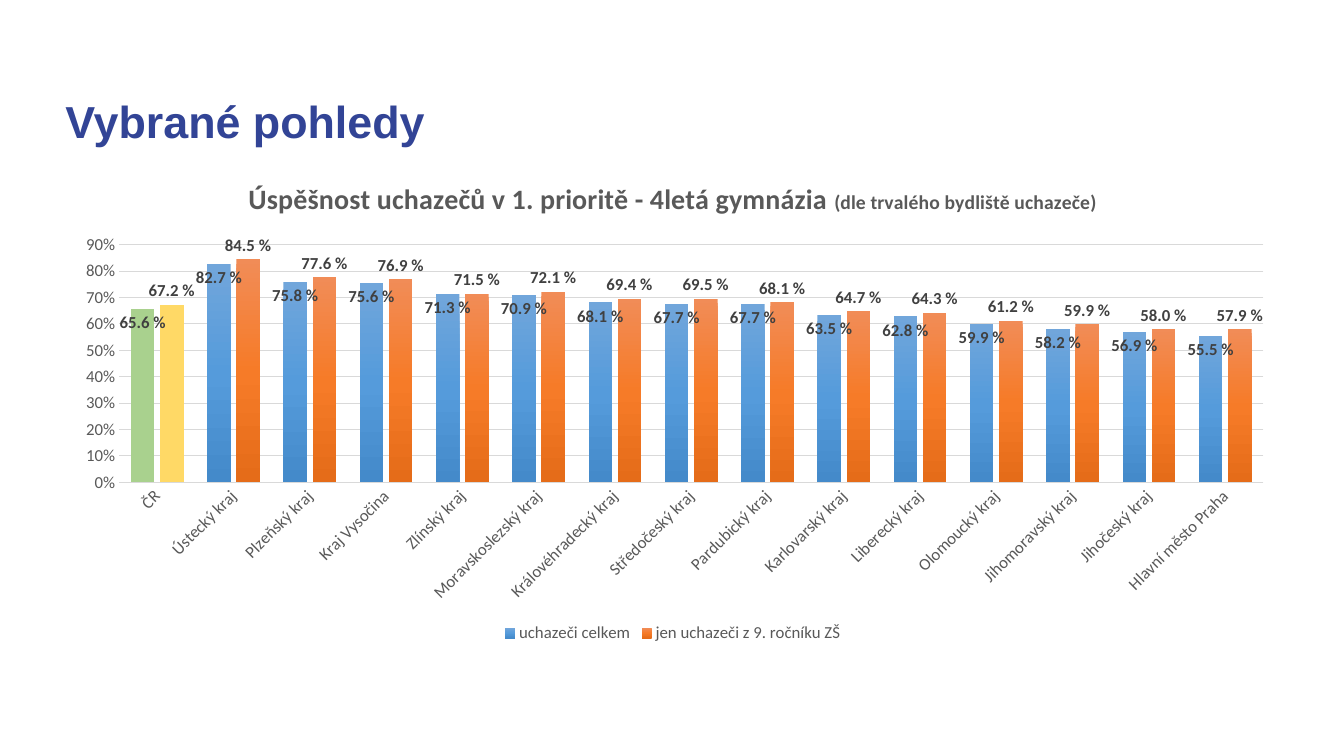
from copy import deepcopy

from lxml.etree import SubElement
from pptx import Presentation
from pptx.chart.data import CategoryChartData
from pptx.dml.color import RGBColor
from pptx.enum.chart import XL_CHART_TYPE, XL_LABEL_POSITION, XL_LEGEND_POSITION, XL_TICK_MARK
from pptx.oxml.ns import qn
from pptx.util import Cm, Pt

NAVY = RGBColor(0x32, 0x44, 0x96)
GREY_TEXT = RGBColor(0x59, 0x59, 0x59)
LABEL_TEXT = RGBColor(0x40, 0x40, 0x40)
GRID = RGBColor(0xD9, 0xD9, 0xD9)
GREEN = RGBColor(0xA9, 0xD1, 0x8E)
YELLOW = RGBColor(0xFF, 0xD9, 0x66)
BLUES = (RGBColor(0x71, 0xA6, 0xDB), RGBColor(0x55, 0x9B, 0xDB), RGBColor(0x44, 0x8A, 0xCA))
ORANGES = (RGBColor(0xF1, 0x8C, 0x57), RGBColor(0xF6, 0x7B, 0x28), RGBColor(0xE5, 0x6C, 0x19))

REGIONS = [
    ("ČR", 0.656, 0.672),
    ("Ústecký kraj", 0.827, 0.845),
    ("Plzeňský kraj", 0.758, 0.776),
    ("Kraj Vysočina", 0.756, 0.769),
    ("Zlínský kraj", 0.713, 0.715),
    ("Moravskoslezský kraj", 0.709, 0.721),
    ("Královéhradecký kraj", 0.681, 0.694),
    ("Středočeský kraj", 0.677, 0.695),
    ("Pardubický kraj", 0.677, 0.681),
    ("Karlovarský kraj", 0.635, 0.647),
    ("Liberecký kraj", 0.628, 0.643),
    ("Olomoucký kraj", 0.599, 0.612),
    ("Jihomoravský kraj", 0.582, 0.599),
    ("Jihočeský kraj", 0.569, 0.58),
    ("Hlavní město Praha", 0.555, 0.579),
]


def format_font(font, size=12, color=GREY_TEXT, name="Calibri", bold=False):
    font.size = Pt(size)
    font.name = name
    font.bold = bold
    font.color.rgb = color


def add_text(paragraph, text, **text_format):
    run = paragraph.add_run()
    run.text = text
    format_font(run.font, **text_format)


def add_heading(slide):
    shape = slide.shapes.add_textbox(Cm(1.4), Cm(2.18), Cm(31.01), Cm(15.75))
    shape.text_frame.word_wrap = True
    paragraph = shape.text_frame.paragraphs[0]
    paragraph.line_spacing = 1.05
    paragraph.space_after = Pt(6)
    add_text(paragraph, "Vybrané pohledy", size=32, color=NAVY, name="Arial", bold=True)


def fill_gradient(fill, series, colors):
    fill.gradient()
    fill.gradient_angle = 270
    stop_list = series._element.find(".//" + qn("a:gsLst"))
    stop_list.append(deepcopy(stop_list[0]))
    for index, (stop, color) in enumerate(zip(fill.gradient_stops, colors)):
        stop.color.rgb = color
        stop.position = index / 2


def format_series(series, colors, first_color, label_position):
    fill_gradient(series.format.fill, series, colors)
    first_fill = series.points[0].format.fill
    first_fill.solid()
    first_fill.fore_color.rgb = first_color
    labels = series.data_labels
    labels.show_value = True
    labels.position = label_position
    labels.number_format = '0.0" "%'
    labels.number_format_is_linked = False
    format_font(labels.font, color=LABEL_TEXT, bold=True)


def format_axis(axis):
    axis.major_tick_mark = XL_TICK_MARK.NONE
    axis.minor_tick_mark = XL_TICK_MARK.NONE
    format_font(axis.tick_labels.font)


def format_axes(chart):
    category_axis, value_axis = chart.category_axis, chart.value_axis
    format_axis(category_axis)
    category_axis.format.line.color.rgb = GRID
    category_axis.format.line.width = Pt(1)
    category_axis._element.find(".//" + qn("a:bodyPr")).set("rot", "-2700000")
    format_axis(value_axis)
    value_axis.minimum_scale = 0
    value_axis.maximum_scale = 0.9
    value_axis.major_unit = 0.1
    value_axis.tick_labels.number_format = "0%"
    value_axis.tick_labels.number_format_is_linked = False
    value_axis.format.line.fill.background()
    value_axis.major_gridlines.format.line.color.rgb = GRID
    value_axis.major_gridlines.format.line.width = Pt(0.75)


def place_plot(chart, x, y, w, h):
    plot_area = chart._chartSpace.find(".//" + qn("c:plotArea"))
    layout = plot_area.find(qn("c:layout"))
    if layout is None:
        layout = SubElement(plot_area, qn("c:layout"))
        plot_area.insert(0, layout)
    manual = SubElement(layout, qn("c:manualLayout"))
    settings = dict(layoutTarget="inner", xMode="edge", yMode="edge", x=x, y=y, w=w, h=h)
    for tag, value in settings.items():
        SubElement(manual, qn("c:" + tag)).set("val", str(value))


def add_success_chart(slide):
    names, all_applicants, ninth_grade = zip(*REGIONS)
    data = CategoryChartData(number_format="0.0%")
    data.categories = names
    data.add_series("uchazeči celkem", all_applicants)
    data.add_series("jen uchazeči z 9. ročníku ZŠ", ninth_grade)
    chart = slide.shapes.add_chart(
        XL_CHART_TYPE.COLUMN_CLUSTERED, Cm(1.45), Cm(4.09), Cm(31.01), Cm(12.22), data
    ).chart
    format_font(chart.font, size=10)

    chart.has_title = True
    title = chart.chart_title.text_frame.paragraphs[0]
    add_text(title, "Úspěšnost uchazečů v 1. prioritě - 4letá gymnázia ", size=20, bold=True)
    add_text(title, "(dle trvalého bydliště uchazeče)", size=14, bold=True)

    chart.has_legend = True
    chart.legend.position = XL_LEGEND_POSITION.BOTTOM
    chart.legend.include_in_layout = False
    format_font(chart.legend.font)

    plot = chart.plots[0]
    plot.gap_width = 100
    plot.overlap = -24
    plot.vary_by_categories = False
    format_series(plot.series[0], BLUES, GREEN, XL_LABEL_POSITION.INSIDE_END)
    format_series(plot.series[1], ORANGES, YELLOW, XL_LABEL_POSITION.OUTSIDE_END)
    format_axes(chart)
    place_plot(chart, x=0.05, y=0.17, w=0.93, h=0.49)


def main():
    presentation = Presentation()
    presentation.slide_width = Cm(33.87)
    presentation.slide_height = Cm(19.05)
    slide = presentation.slides.add_slide(presentation.slide_layouts[6])
    add_heading(slide)
    add_success_chart(slide)
    presentation.save("out.pptx")


if __name__ == "__main__":
    main()
